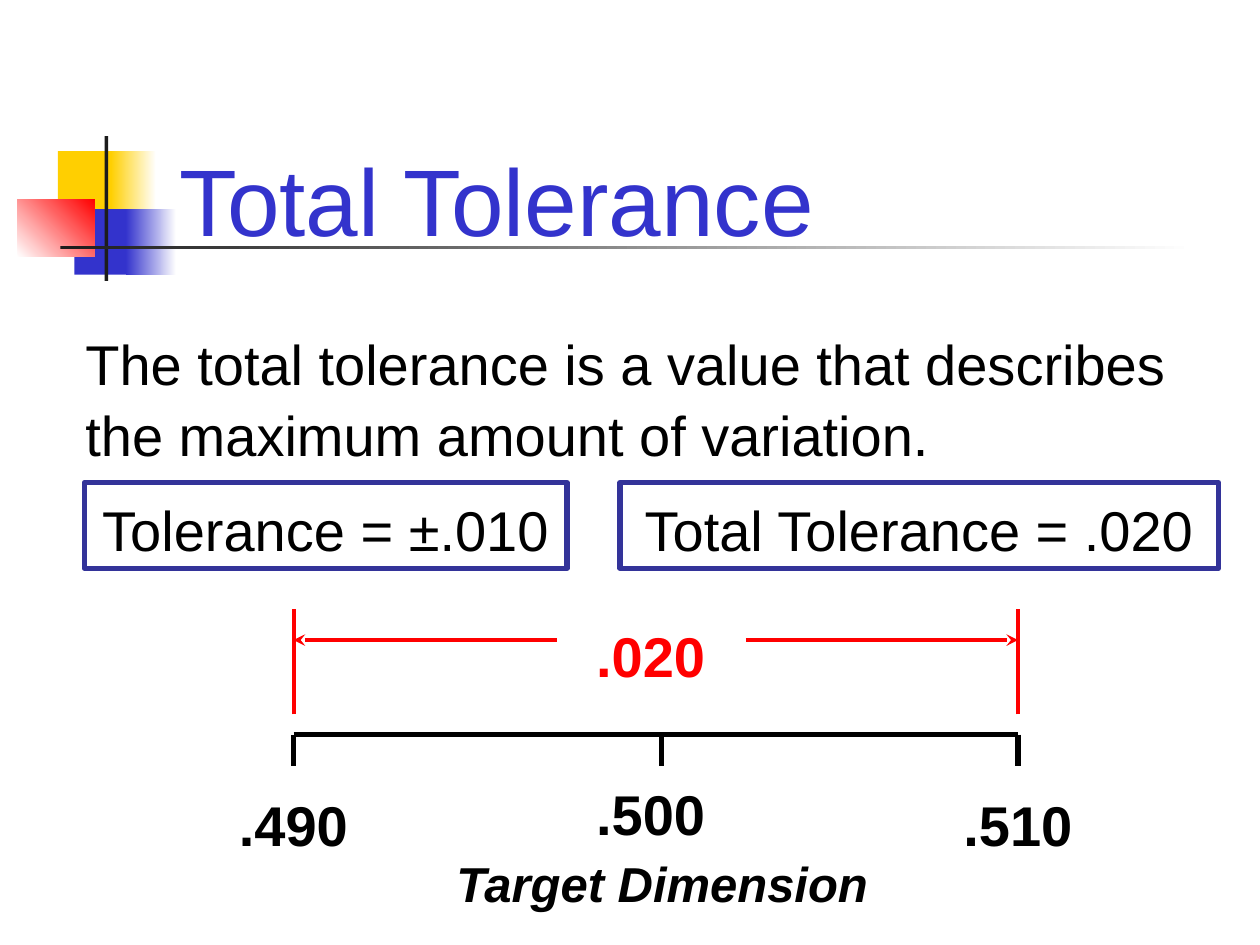
from lxml import etree
from pptx import Presentation
from pptx.dml.color import RGBColor
from pptx.enum import shapes, text
from pptx.oxml.ns import qn
from pptx.util import Inches, Pt

BLACK = RGBColor(0x00, 0x00, 0x00)
WHITE = RGBColor(0xFF, 0xFF, 0xFF)
CHARCOAL = RGBColor(0x1C, 0x1C, 0x1C)
YELLOW = RGBColor(0xFF, 0xCF, 0x01)
BLUE = RGBColor(0x33, 0x33, 0xCC)
NAVY = RGBColor(0x33, 0x33, 0x99)
RED = RGBColor(0xFF, 0x00, 0x00)
LEFT, CENTER = text.PP_ALIGN.LEFT, text.PP_ALIGN.CENTER

deck = Presentation()
deck.slide_width, deck.slide_height = Inches(10), Inches(7.5)
slide = deck.slides.add_slide(deck.slide_layouts[6])


def write(shape, words, size=32, color=BLACK, align=CENTER, bold=False, italic=False):
    frame = shape.text_frame
    frame.word_wrap = True
    frame.vertical_anchor = text.MSO_ANCHOR.TOP
    frame.margin_top = Inches(0.08)
    paragraph = frame.paragraphs[0]
    paragraph.text = words
    paragraph.alignment = align
    paragraph.line_spacing = 1.05
    font = paragraph.font
    font.name, font.size, font.color.rgb = "Arial", Pt(size), color
    font.bold, font.italic = bold, italic


def draw_line(x1, y1, x2, y2, color, width, arrow=False):
    line = slide.shapes.add_connector(
        shapes.MSO_CONNECTOR.STRAIGHT, Inches(x1), Inches(y1), Inches(x2), Inches(y2))
    line.line.color.rgb = color
    line.line.width = Pt(width)
    if arrow:
        etree.SubElement(line.line._get_or_add_ln(), qn("a:tailEnd"), type="stealth")
    etree.SubElement(line._element.spPr, qn("a:effectLst"))


for left, top, width, height, start, end, angle in [
    (0.46, 1.2, 0.48, 0.52, YELLOW, None, 0),
    (0.88, 1.2, 0.36, 0.52, YELLOW, WHITE, 0),
    (0.59, 1.66, 0.46, 0.52, BLUE, None, 0),
    (1, 1.66, 0.4, 0.52, BLUE, WHITE, 0),
    (0.14, 1.58, 0.61, 0.46, WHITE, RED, 45),
    (0.83, 1.08, 0.03, 1.15, CHARCOAL, None, 0),
    (0.48, 1.95, 9, 0.03, CHARCOAL, WHITE, 0),
]:
    ornament = slide.shapes.add_shape(
        shapes.MSO_SHAPE.RECTANGLE, Inches(left), Inches(top), Inches(width), Inches(height))
    ornament.shadow.inherit = False
    ornament.line.fill.background()
    if end is None:
        ornament.fill.solid()
        ornament.fill.fore_color.rgb = start
    else:
        ornament.fill.gradient()
        ornament.fill.gradient_angle = angle
        for stop, position, color in zip(ornament.fill.gradient_stops, (0, 1), (start, end)):
            stop.position = position
            stop.color.rgb = color

for left, width, equation in [
    (0.67, 3.83, "Tolerance = ±.010"),
    (4.92, 4.75, "Total Tolerance = .020"),
]:
    equation_box = slide.shapes.add_shape(
        shapes.MSO_SHAPE.RECTANGLE, Inches(left), Inches(3.83), Inches(width), Inches(0.68))
    equation_box.shadow.inherit = False
    equation_box.fill.background()
    equation_box.line.color.rgb = NAVY
    equation_box.line.width = Pt(3)
    write(equation_box, equation)

low, target, high = 2.33, 5.25, 8.08
scale_y, arrow_y = 5.83, 5.08
draw_line(low, scale_y, high, scale_y, BLACK, 3)
for x in (low, target, high):
    draw_line(x, scale_y, x, scale_y + 0.25, BLACK, 3)
for limit, arrow_start in [(low, 4.42), (high, 5.92)]:
    draw_line(limit, 5.67, limit, 4.83, RED, 2.25)
    draw_line(arrow_start, arrow_y, limit, arrow_y, RED, 2.25, arrow=True)

for left, top, width, height, words, style in [
    (1.33, 1, 5.83, 1, "Total Tolerance", dict(size=54, color=BLUE, align=LEFT)),
    (0.58, 2.51, 9, 1.17,
     "The total tolerance is a value that describes the maximum amount of variation.",
     dict(align=LEFT)),
    (4.5, 4.83, 1.33, 0.63, ".020", dict(color=RED, bold=True)),
    (4.58, 6.08, 1.17, 0.63, ".500", dict(bold=True)),
    (1.58, 6.17, 1.5, 0.63, ".490", dict(bold=True)),
    (7.33, 6.17, 1.5, 0.63, ".510", dict(bold=True)),
    (3.42, 6.67, 3.67, 0.57, "Target Dimension", dict(size=28, bold=True, italic=True)),
]:
    label = slide.shapes.add_textbox(Inches(left), Inches(top), Inches(width), Inches(height))
    write(label, words, **style)

deck.save("out.pptx")
